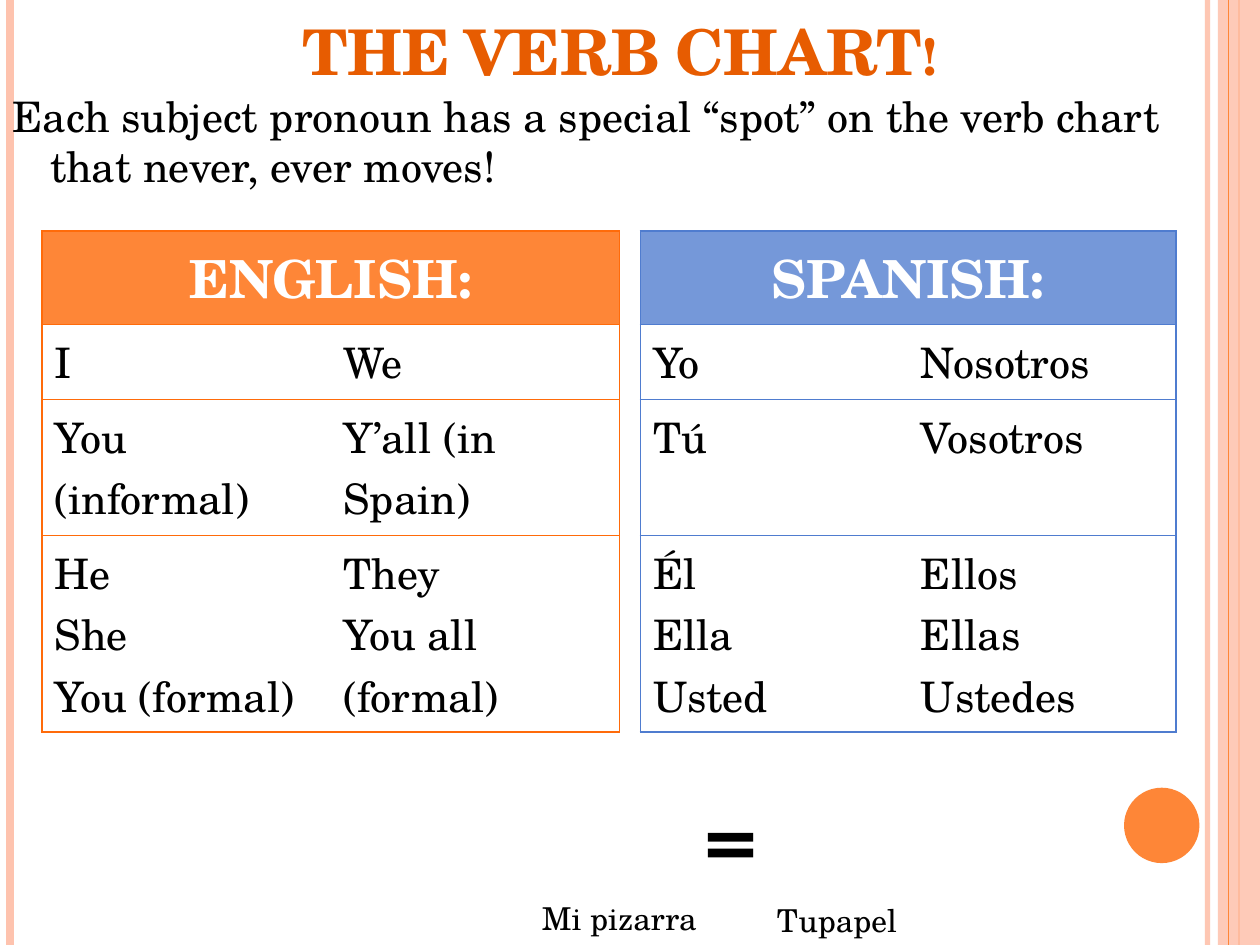
from lxml import etree
from pptx import Presentation
from pptx import util as u
from pptx.dml.color import RGBColor
from pptx.enum import shapes, text
from pptx.oxml.ns import qn

FONT = "TeX Gyre Schola"
PEACH, ORANGE, BLUE = "FEC3AE", "FE8637", "7598D9"
CENTER = text.PP_ALIGN.CENTER


def colour(value):
    return RGBColor.from_string(value)


def set_alpha(fill_parent, percent):
    tint = fill_parent.find(".//" + qn("a:srgbClr"))
    etree.SubElement(tint, qn("a:alpha"), val=str(percent * 1000))


def write(para, words, size, ink="000000", bold=False, **layout):
    for name, value in layout.items():
        setattr(para, name, value)
    span = para.add_run()
    span.text = words
    for name, value in dict(name=FONT, size=u.Pt(size), bold=bold).items():
        setattr(span.font, name, value)
    span.font.color.rgb = colour(ink)
    return span


def add_text(page, box, words, size, anchor=text.MSO_ANCHOR.TOP, **style):
    frame = page.shapes.add_textbox(*map(u.Cm, box)).text_frame
    frame.word_wrap = True
    frame.vertical_anchor = anchor
    para = frame.paragraphs[0]
    return para, write(para, words, size, **style)


def add_margins(page, width, height):
    """Vertical rules, right-hand band and disc."""
    def rule(x, tint, weight):
        line = page.shapes.add_connector(
            shapes.MSO_CONNECTOR.STRAIGHT, u.Cm(x), 0, u.Cm(x), u.Cm(height))
        line.line.color.rgb = colour(tint)
        line.line.width = u.Pt(weight)
        etree.SubElement(line._element.spPr, qn("a:effectLst"))
        return line

    def solid(kind, box, tint):
        shape = page.shapes.add_shape(kind, *map(u.Cm, box))
        shape.shadow.inherit = False
        shape.fill.solid()
        shape.fill.fore_color.rgb = colour(tint)
        shape.line.fill.background()
        return shape

    inner = rule(width - 1.06, PEACH, 3)
    set_alpha(inner._element.spPr, 93)
    rule(0.21, PEACH, 4.5)
    rule(width - 0.42, ORANGE, 1.5)
    band = solid(shapes.MSO_SHAPE.RECTANGLE, (width - 0.85, 0, 0.85, height), PEACH)
    set_alpha(band._element.spPr, 87)
    rule(width - 0.64, ORANGE, 0.75)
    solid(shapes.MSO_SHAPE.OVAL, (width - 2.74, 15.88, 1.52, 1.52), ORANGE)


def add_heading(page, box):
    """Title with the introduction below it."""
    left, top, width, height = box
    _, span = add_text(page, (left + 2.12, top - 1.27, 20.75, 3.17), "THE VERB CHART!",
                       36, text.MSO_ANCHOR.BOTTOM, ink="E75C01", bold=True,
                       alignment=CENTER)
    span.font._element.set("cap", "small")
    para, _ = add_text(
        page, (left, top + 1.7, width, height - 1.7),
        "Each subject pronoun has a special “spot” on the verb chart that never, ever moves!",
        24, space_before=u.Pt(6))
    for name, value in dict(marL=0.76, indent=-0.76).items():
        para._p.get_or_add_pPr().set(name, str(u.Cm(value)))


def set_borders(cell, edges, tint):
    """Draw the named edges and blank the others."""
    props = cell._tc.get_or_add_tcPr()
    for place, edge in enumerate("LRTB"):
        line = etree.Element(qn("a:ln" + edge), w=str(u.Pt(1)))
        if edge in edges:
            fill = etree.SubElement(line, qn("a:solidFill"))
            etree.SubElement(fill, qn("a:srgbClr"), val=tint)
        else:
            etree.SubElement(line, qn("a:noFill"))
        props.insert(place, line)


def add_verb_chart(page, box, heading, rows, fill, border):
    """Two-column pronoun table under a merged heading."""
    heights = (1.88, 1.51, 2.74, 3.97)
    table = page.shapes.add_table(len(heights), 2, *map(u.Cm, box)).table
    for column in table.columns:
        column.width = u.Cm(box[2] / 2)
    for row, height in zip(table.rows, heights):
        row.height = u.Cm(height)
    table.cell(0, 0).merge(table.cell(0, 1))
    for r, entries in enumerate([(heading, "")] + rows):
        for c, entry in enumerate(entries):
            cell = table.cell(r, c)
            if r == 0:
                cell.fill.solid()
                cell.fill.fore_color.rgb = colour(fill)
                cell.vertical_anchor = text.MSO_ANCHOR.MIDDLE
                style = dict(size=30, ink="FFFFFF", bold=True, alignment=CENTER)
            else:
                cell.fill.background()
                style = dict(size=24)
            edges = "LRTB" if r == 0 else "TB" + "LR"[c]
            set_borders(cell, edges, border)
            for i, words in enumerate(entry.split("\n") if entry else []):
                para = cell.text_frame.paragraphs[0] if i == 0 else cell.text_frame.add_paragraph()
                write(para, words, **style)


def add_equation(page, box):
    """Equals sign above its two captions."""
    left, top = box[:2]
    for x, y, width, height, words, size, bold in (
            (3.35, 0, 3.23, 2.39, "=", 50, True),
            (0, 2.39, 5.41, 1.02, "Mi pizarra", 18, False),
            (4.39, 2.43, 5.41, 1.02, "Tupapel", 18, False)):
        add_text(page, (left + x, top + y, width, height), words, size,
                 bold=bold, alignment=CENTER)


def main():
    deck = Presentation()
    deck.slide_width, deck.slide_height = u.Cm(25.4), u.Cm(19.05)
    page = deck.slides.add_slide(deck.slide_layouts[6])
    add_margins(page, 25.4, 19.05)
    add_heading(page, (0, 0, 25.4, 4.5))
    add_verb_chart(page, (0.85, 4.66, 11.64, 10.1), "ENGLISH:", [
        ("I", "We"),
        ("You (informal)", "Y’all (in Spain)"),
        ("He\nShe\nYou (formal)", "They\nYou all (formal)"),
    ], ORANGE, "FF6B0A")
    add_verb_chart(page, (12.91, 4.66, 10.8, 10.1), "SPANISH:", [
        ("Yo", "Nosotros"),
        ("Tú", "Vosotros"),
        ("Él\nElla\nUsted", "Ellos\nEllas\nUstedes"),
    ], BLUE, "4F7CCF")
    add_equation(page, (9.78, 15.6, 9.8, 3.46))
    deck.save("out.pptx")


if __name__ == "__main__":
    main()
